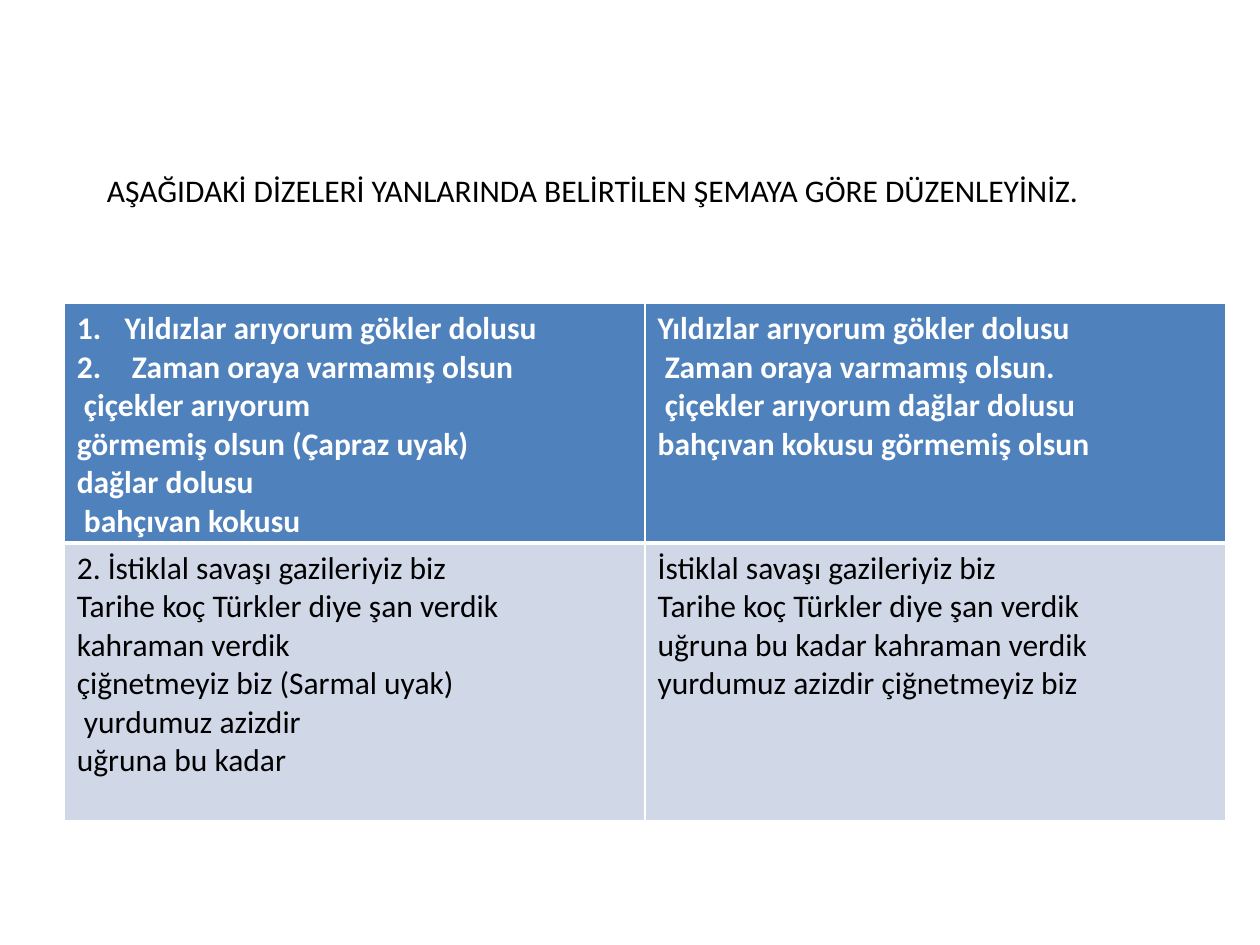
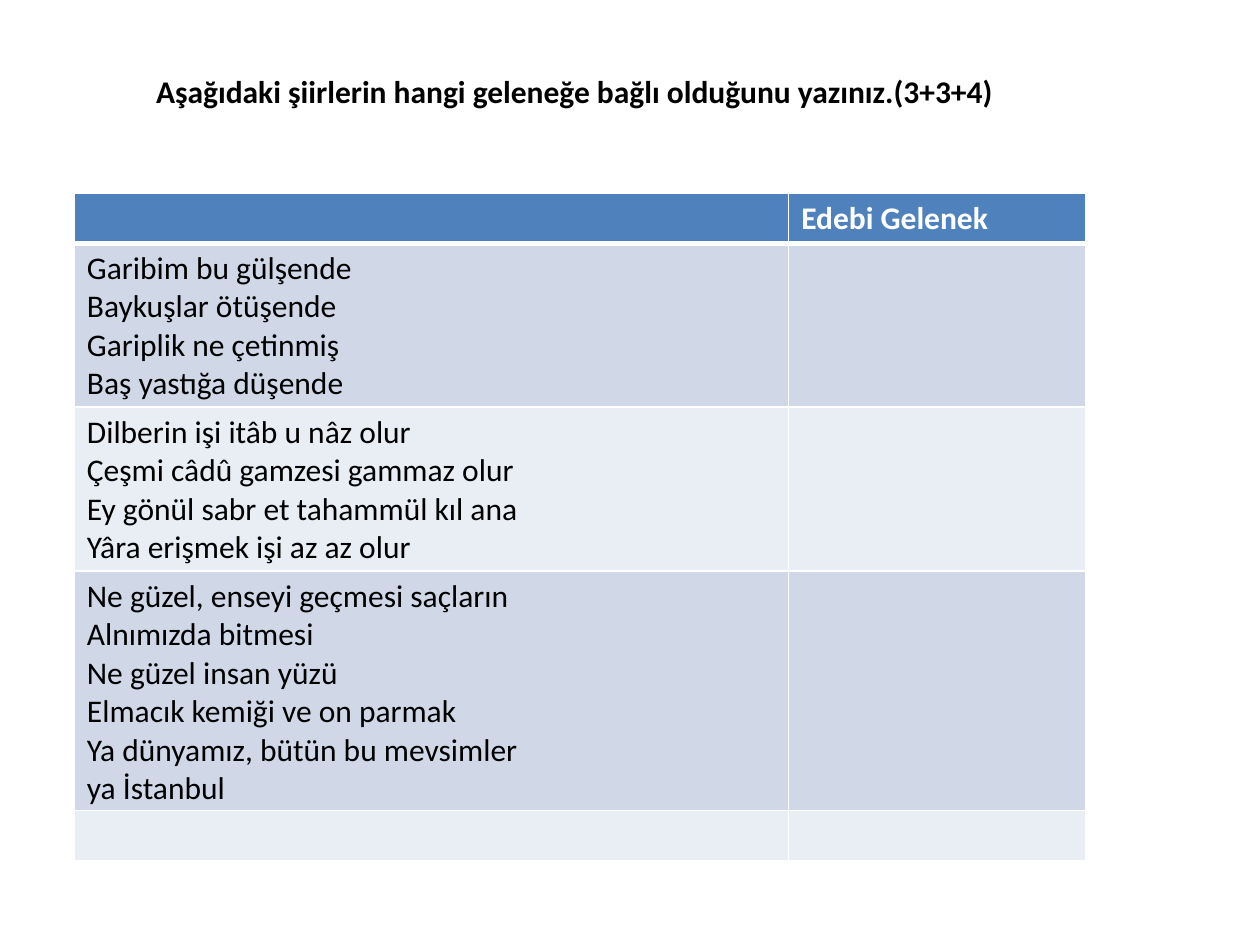
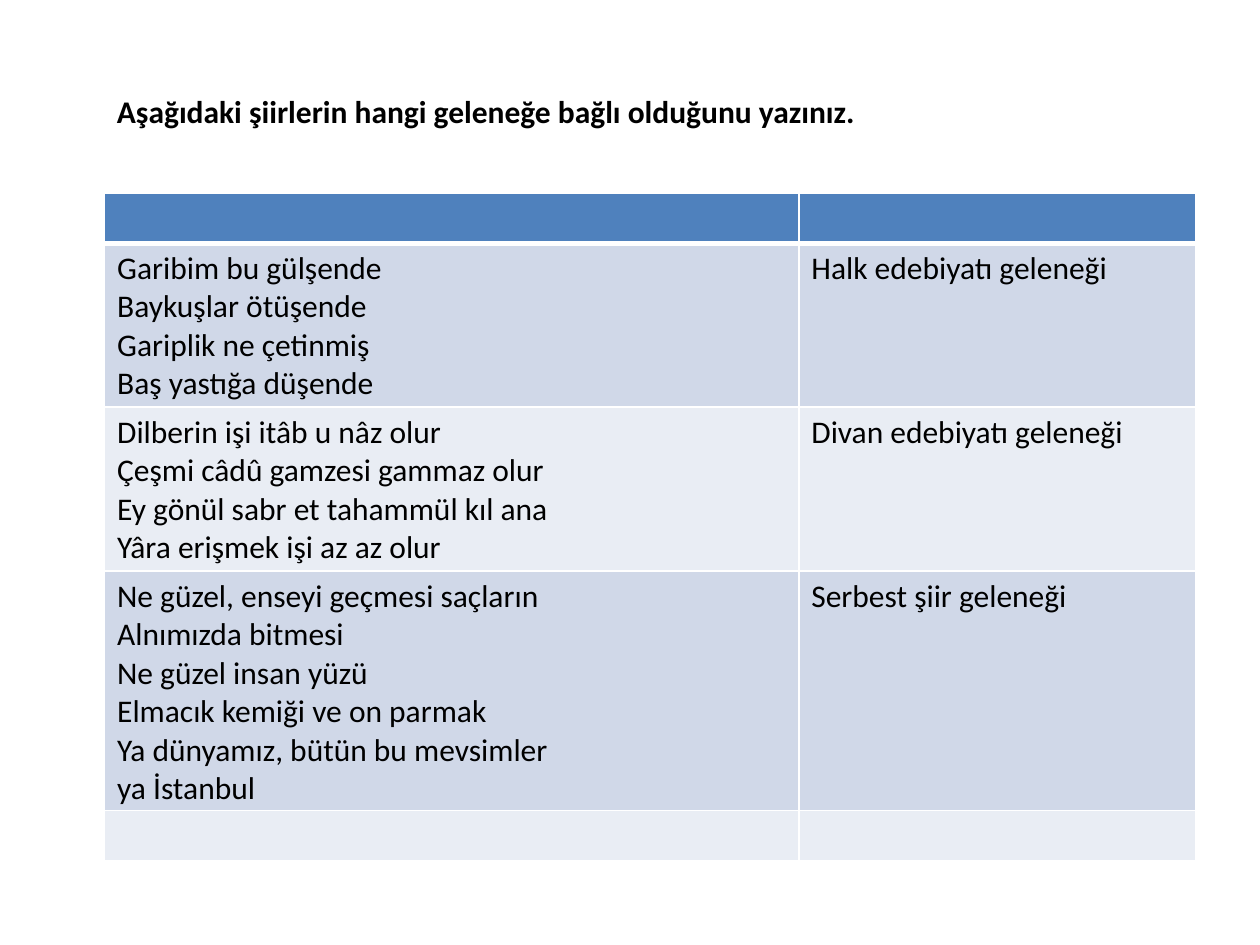
from dataclasses import dataclass

from lxml import etree
from pptx import Presentation
from pptx.dml.color import RGBColor
from pptx.oxml.ns import qn
from pptx.util import Inches, Pt


@dataclass(frozen=True)
class Theme:
    font: str = "Calibri"
    size: int = 18
    ink: str = "000000"
    white: str = "FFFFFF"
    header: str = "4F81BD"
    bands: tuple = ("D0D8E8", "E9EDF4")
    rule: int = 1
    header_rule: int = 3


THEME = Theme()
NUMBER_INDENT = 0.38

POEMS = (
    "Garibim bu gülşende\nBaykuşlar ötüşende\nGariplik ne çetinmiş\nBaş yastığa düşende",
    "Dilberin işi itâb u nâz olur\nÇeşmi câdû gamzesi gammaz olur\n"
    "Ey gönül sabr et tahammül kıl ana\nYâra erişmek işi az az olur",
    "Ne güzel, enseyi geçmesi saçların\nAlnımızda bitmesi\nNe güzel insan yüzü\n"
    "Elmacık kemiği ve on parmak\nYa dünyamız, bütün bu mevsimler\nya İstanbul",
)
POEM_ROW_HEIGHTS = (0.4, 1.3, 1.3, 1.9, 0.4)
TRADITIONS = ("Halk edebiyatı geleneği", "Divan edebiyatı geleneği", "Serbest şiir geleneği")
TRADITION_QUESTION = "Aşağıdaki şiirlerin hangi geleneğe bağlı olduğunu yazınız."

SCRAMBLED_CROSS_RHYME = (
    "Yıldızlar arıyorum gökler dolusu",
    " Zaman oraya varmamış olsun",
    " çiçekler arıyorum",
    "görmemiş olsun (Çapraz uyak)",
    "dağlar dolusu",
    " bahçıvan kokusu",
)
SOLVED_CROSS_RHYME = (
    "Yıldızlar arıyorum gökler dolusu",
    " Zaman oraya varmamış olsun.",
    " çiçekler arıyorum dağlar dolusu",
    "bahçıvan kokusu görmemiş olsun",
)
SCRAMBLED_ENCLOSED_RHYME = (
    "2. İstiklal savaşı gazileriyiz biz",
    "Tarihe koç Türkler diye şan verdik\nkahraman verdik",
    "çiğnetmeyiz biz (Sarmal uyak)",
    " yurdumuz azizdir",
    "uğruna bu kadar",
)
SOLVED_ENCLOSED_RHYME = (
    "İstiklal savaşı gazileriyiz biz",
    "Tarihe koç Türkler diye şan verdik",
    "uğruna bu kadar kahraman verdik\nyurdumuz azizdir çiğnetmeyiz biz",
)


def write_paragraphs(frame, texts, color, bold):
    """Write one paragraph per text; a newline becomes a line break."""
    for index, text in enumerate(texts):
        para = frame.add_paragraph() if index else frame.paragraphs[0]
        for line_number, line in enumerate(text.split("\n")):
            if line_number:
                para.add_line_break()
            span = para.add_run()
            span.text = line
            span.font.name = THEME.font
            span.font.size = Pt(THEME.size)
            span.font.bold = bold
            span.font.color.rgb = RGBColor.from_string(color)


def number_paragraphs(paragraphs, numbered_count):
    """Hang every paragraph and number the first ones."""
    for index, para in enumerate(paragraphs):
        properties = para._p.get_or_add_pPr()
        properties.set("marL", str(Inches(NUMBER_INDENT)))
        properties.set("indent", str(-Inches(NUMBER_INDENT)))
        if index < numbered_count:
            etree.SubElement(properties, qn("a:buFont"), typeface="+mj-lt")
            etree.SubElement(properties, qn("a:buAutoNum"), type="arabicPeriod")
        else:
            etree.SubElement(properties, qn("a:buNone"))


def add_question(page, text, left, top, width, height, bold=True):
    box = page.shapes.add_textbox(Inches(left), Inches(top), Inches(width), Inches(height))
    box.text_frame.word_wrap = True
    write_paragraphs(box.text_frame, [text], THEME.ink, bold)


def set_borders(cell, bottom_width):
    properties = cell._tc.get_or_add_tcPr()
    for side in ("L", "R", "T", "B"):
        width = bottom_width if side == "B" else THEME.rule
        line = etree.SubElement(properties, qn(f"a:ln{side}"), w=str(Pt(width)))
        fill = etree.SubElement(line, qn("a:solidFill"))
        etree.SubElement(fill, qn("a:srgbClr"), val=THEME.white)


def add_banded_table(page, left, top, column_widths, row_heights, rows):
    """Each cell is a sequence of paragraphs; the first row is the header."""
    frame = page.shapes.add_table(
        len(row_heights), len(column_widths), Inches(left), Inches(top),
        Inches(sum(column_widths)), Inches(sum(row_heights)))
    table = frame.table
    for column, width in zip(table.columns, column_widths):
        column.width = Inches(width)
    for row_index, (height, texts) in enumerate(zip(row_heights, rows)):
        table.rows[row_index].height = Inches(height)
        is_header = row_index == 0
        fill = THEME.header if is_header else THEME.bands[(row_index - 1) % 2]
        for column_index, paragraphs in enumerate(texts):
            cell = table.cell(row_index, column_index)
            set_borders(cell, THEME.header_rule if is_header else THEME.rule)
            cell.fill.solid()
            cell.fill.fore_color.rgb = RGBColor.from_string(fill)
            write_paragraphs(cell.text_frame, paragraphs,
                             THEME.white if is_header else THEME.ink, is_header)
    return table


def add_poem_table(page, left, column_widths, heading=(), answers=((), (), ())):
    poem_rows = [((poem,), answer) for poem, answer in zip(POEMS, answers)]
    rows = [((), heading), *poem_rows, ((), ())]
    add_banded_table(page, left, 1.53, column_widths, POEM_ROW_HEIGHTS, rows)


def add_rhyme_page(page):
    add_question(page, "AŞAĞIDAKİ DİZELERİ YANLARINDA BELİRTİLEN ŞEMAYA GÖRE DÜZENLEYİNİZ.",
                 0.75, 1.31, 8.35, 0.71, bold=False)
    table = add_banded_table(
        page, 0.51, 2.41, (4.61, 4.61), (1.9, 2.2),
        ((SCRAMBLED_CROSS_RHYME, SOLVED_CROSS_RHYME),
         (SCRAMBLED_ENCLOSED_RHYME, SOLVED_ENCLOSED_RHYME)))
    number_paragraphs(table.cell(0, 0).text_frame.paragraphs, 2)


def add_tradition_question_page(page):
    add_poem_table(page, 0.59, (5.67, 2.36), heading=("Edebi Gelenek",))
    add_question(page, TRADITION_QUESTION + "(3+3+4)", 1.14, 0.52, 8.03, 0.4)


def add_tradition_answer_page(page):
    add_question(page, TRADITION_QUESTION, 0.83, 0.68, 6.67, 0.4)
    add_poem_table(page, 0.83, (5.51, 3.15), answers=[(name,) for name in TRADITIONS])


def main():
    deck = Presentation()
    deck.slide_width, deck.slide_height = Inches(10), Inches(7.5)
    blank = deck.slide_layouts[6]
    for fill_page in (add_rhyme_page, add_tradition_question_page, add_tradition_answer_page):
        fill_page(deck.slides.add_slide(blank))
    deck.save("out.pptx")


if __name__ == "__main__":
    main()
